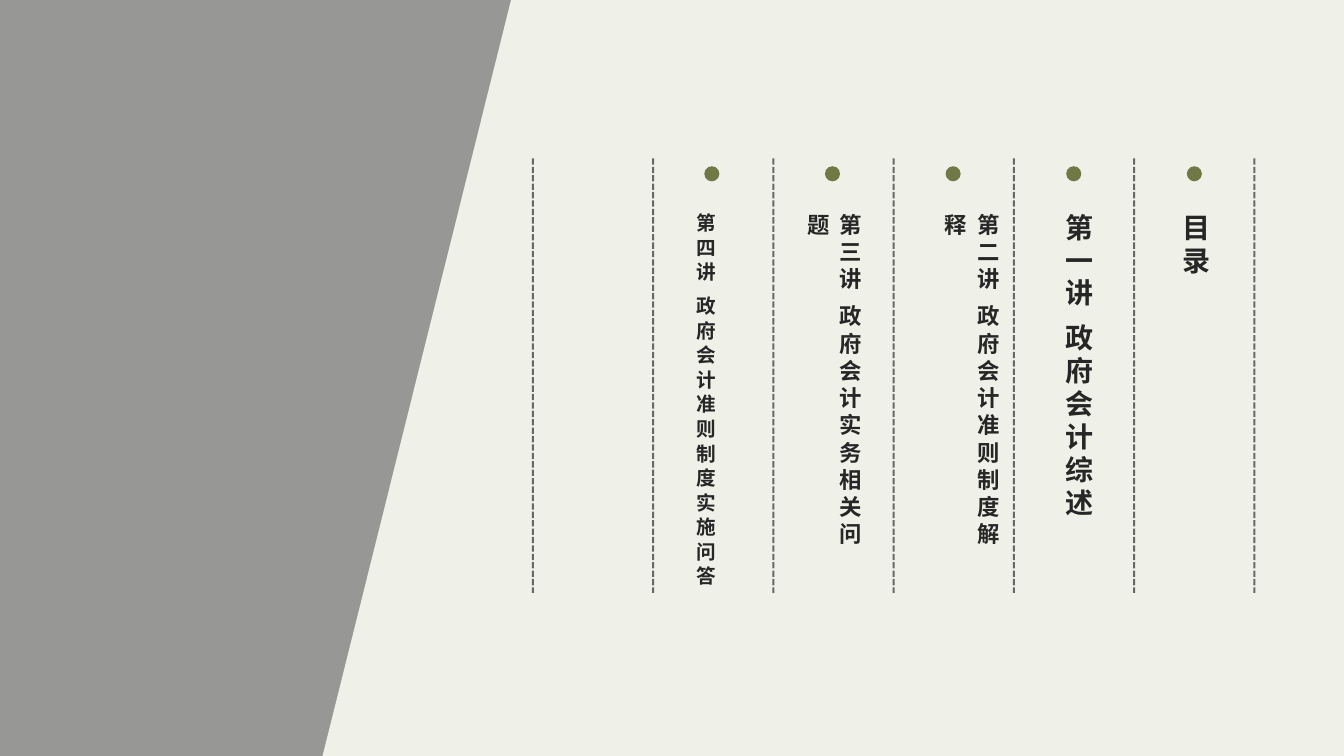
from pptx import Presentation
from pptx.dml.color import RGBColor
from pptx.enum.dml import MSO_LINE
from pptx.enum.shapes import MSO_CONNECTOR as CON, MSO_SHAPE as SHAPE
from pptx.enum.text import MSO_ANCHOR as ANCHOR
from pptx.oxml.ns import qn
from pptx.util import Cm, Pt
from lxml.etree import SubElement as Sub

PAPER = RGBColor(0xFC, 0xFC, 0xFB)
CREAM = RGBColor(0xEF, 0xF1, 0xE8)
OLIVE = RGBColor(0x70, 0x79, 0x46)
INK = RGBColor(0x26, 0x26, 0x26)
RULE = RGBColor(0x0D, 0x0D, 0x0D)
BLACK = RGBColor(0, 0, 0)
FONT = "Noto Sans CJK SC"
WIDE, HIGH = 33.87, 19.05

# text, size, line spacing, shift from dot, height
ITEMS = [
    ("第四讲 政府会计准则制度实施问答", 14, 1.2, -0.1, 10.06),
    ("第三讲 政府会计实务相关问题", 16, 1.2, 0.11, 9.53),
    ("第二讲 政府会计准则制度解释", 16, 1.2, 0.53, 9.53),
    ("第一讲 政府会计综述", 20, None, 0.13, 9.53),
    ("目录", 20, 1.2, 0.11, 9.53),
]


def paint(shape, color):
    shape.shadow.inherit = False
    shape.fill.solid()
    shape.fill.fore_color.rgb = color
    shape.line.fill.background()


def fade(elem, share):
    color = next(elem.iter(qn("a:srgbClr")))
    Sub(color, qn("a:alpha")).set("val", str(share * 1000))


def backdrop(slide, left, top, width, height):
    slide.background.fill.solid()
    slide.background.fill.fore_color.rgb = PAPER
    veil = slide.shapes.add_shape(
        SHAPE.RECTANGLE, Cm(left), Cm(top), Cm(width), Cm(height))
    paint(veil, BLACK)
    fade(veil.fill._xPr, 40)
    right, base = left + width, top + height
    edge = [(left + 12.88, top), (left + 8.13, base), (right, base)]
    pen = slide.shapes.build_freeform(Cm(right), Cm(top))
    pen.add_line_segments([(Cm(x), Cm(y)) for x, y in edge])
    paint(pen.convert_to_shape(), CREAM)


def rules(slide, left, top, height, gap, count):
    for i in range(count):
        x = Cm(left + i * gap)
        rule = slide.shapes.add_connector(
            CON.STRAIGHT, x, Cm(top), x, Cm(top + height))
        rule.line.color.rgb = RULE
        rule.line.width = Pt(1.5)
        rule.line.dash_style = MSO_LINE.SQUARE_DOT
        props = rule._element.spPr
        fade(props, 60)
        Sub(props, qn("a:effectLst"))


def entry(slide, mid, top, item):
    words, size, space, shift, height = item
    dot = slide.shapes.add_shape(
        SHAPE.OVAL, Cm(mid - 0.19), Cm(top), Cm(0.38), Cm(0.38))
    paint(dot, OLIVE)
    box = slide.shapes.add_textbox(
        Cm(mid + shift - 0.85), Cm(top + 0.94), Cm(1.7), Cm(height))
    frame = box.text_frame
    frame.word_wrap = True
    frame.vertical_anchor = ANCHOR.MIDDLE
    frame._txBody.bodyPr.set("vert", "eaVert")
    para = frame.paragraphs[0]
    para.line_spacing = space
    run = para.add_run()
    run.text = words
    font = run.font
    font.name, font.size, font.bold = FONT, Pt(size), True
    font.color.rgb = INK
    props = run._r.get_or_add_rPr()
    props.set("spc", "350")
    props.set("lang", "zh-CN")
    Sub(props, qn("a:ea")).set("typeface", FONT)


def agenda(slide, left, top):
    rules(slide, left, top, 10.95, 3.03, 7)
    for i, item in enumerate(ITEMS):
        entry(slide, left + 4.51 + i * 3.04, top + 0.2, item)


def main():
    deck = Presentation()
    deck.slide_width, deck.slide_height = Cm(WIDE), Cm(HIGH)
    slide = deck.slides.add_slide(deck.slide_layouts[6])
    backdrop(slide, 0, 0, WIDE, HIGH)
    agenda(slide, 13.43, 3.99)
    deck.save("out.pptx")


if __name__ == "__main__":
    main()
